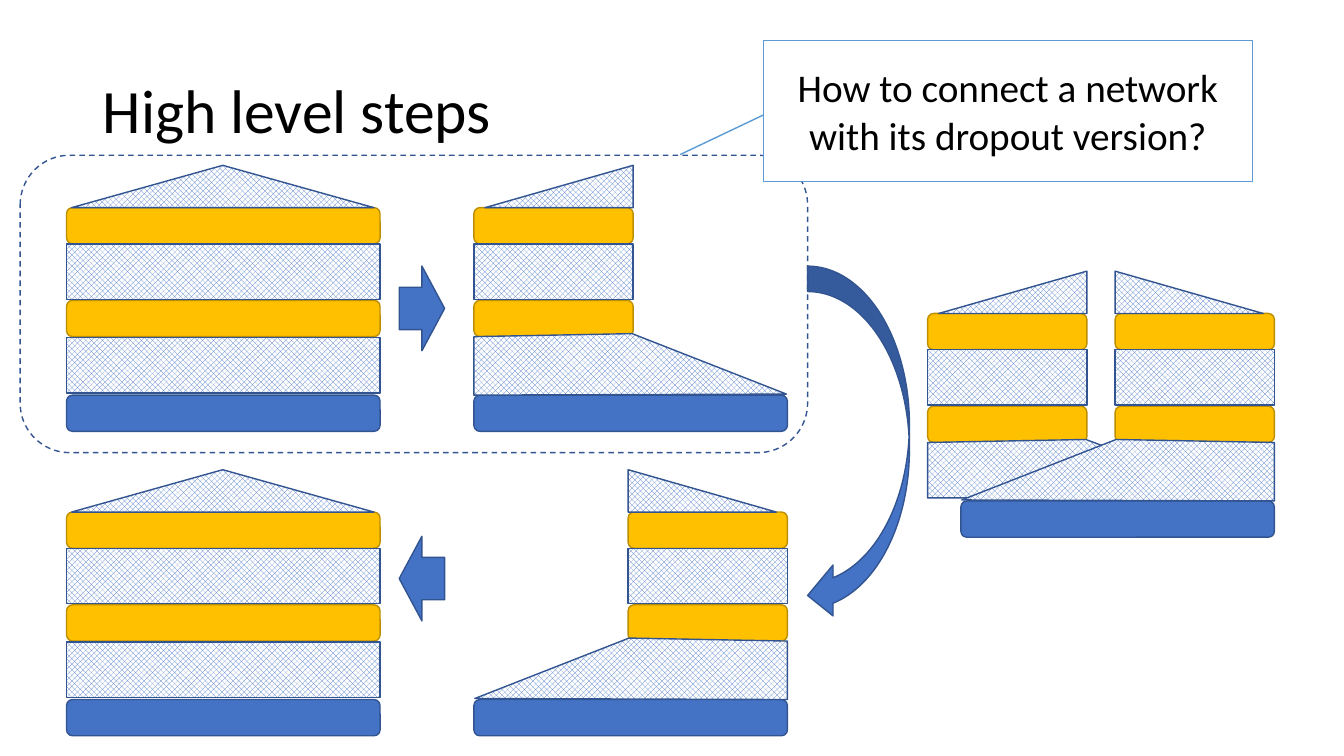
from pptx import Presentation
from pptx.dml.color import RGBColor
from pptx.enum.dml import MSO_LINE, MSO_PATTERN
from pptx.enum.shapes import MSO_SHAPE
from pptx.enum.text import MSO_ANCHOR, PP_ALIGN
from pptx.oxml.ns import qn
from pptx.util import Inches, Pt

TITLE = "High level steps"
QUESTION = "How to connect a network with its dropout version?"
COLORS = {"blue": "4472C4", "navy": "325491", "gold": "FFC000", "brown": "BD8E00",
          "sky": "5B9BD5", "white": "FFFFFF", "black": "000000"}
OPEN, SOLID = MSO_PATTERN.OUTLINED_DIAMOND, MSO_PATTERN.SOLID_DIAMOND

FULL_NETWORKS = [(0.66, 1.64, OPEN), (0.66, 4.66, SOLID)]
HALF_NETWORKS = [
    {"left": 4.7, "top": 4.66, "pattern": SOLID, "mirrored": True},
    {"left": 9.2, "top": 2.69, "pattern": OPEN, "base": False},
    {"left": 9.53, "top": 2.69, "pattern": SOLID, "mirrored": True},
    {"left": 4.7, "top": 1.64, "pattern": OPEN},
]
ARROWS = [
    (MSO_SHAPE.RIGHT_ARROW, (3.96, 2.64, 0.45, 0.84), False),
    (MSO_SHAPE.RIGHT_ARROW, (3.96, 5.32, 0.45, 0.84), True),
    (MSO_SHAPE.CURVED_LEFT_ARROW, (8.01, 2.64, 1.01, 3.52), False),
]

WIDTH, HALF_WIDTH = 3.11, 1.58
ROOF_HEIGHT, BAR_HEIGHT, WEIGHTS_HEIGHT = 0.42, 0.36, 0.55
GOLD_TOPS = (0.42, 1.34)
WEIGHTS_TOPS = (0.78, 1.71)
BASE_TOP = 2.28

presentation = Presentation()
presentation.slide_width, presentation.slide_height = Inches(13.33), Inches(7.5)
slide = presentation.slides.add_slide(presentation.slide_layouts[6])


def color(name):
    return RGBColor.from_string(COLORS[name])


def paint(shape, fill=None, line="navy", pattern=None):
    shape.shadow.inherit = False
    if pattern:
        shape.fill.patterned()
        shape.fill.pattern = pattern
        shape.fill.fore_color.rgb = color("blue")
        shape.fill.back_color.rgb = color("white")
    elif fill:
        shape.fill.solid()
        shape.fill.fore_color.rgb = color(fill)
    else:
        shape.fill.background()
    shape.line.color.rgb = color(line)
    shape.line.width = Pt(1)


def add(kind, box, flipped=False, **style):
    shape = slide.shapes.add_shape(kind, *map(Inches, box))
    if flipped:
        shape.element.spPr.find(qn("a:xfrm")).set("flipH", "1")
    paint(shape, **style)
    return shape


def add_bar(left, top, width, fill, line):
    add(MSO_SHAPE.ROUNDED_RECTANGLE, (left, top, width, BAR_HEIGHT), fill=fill, line=line)


def add_weights(left, top, width, pattern):
    add(MSO_SHAPE.RECTANGLE, (left, top, width, WEIGHTS_HEIGHT), pattern=pattern)


def add_full_network(left, top, pattern):
    for offset in GOLD_TOPS:
        add_bar(left, top + offset, WIDTH, "gold", "brown")
    add_bar(left, top + BASE_TOP, WIDTH, "blue", "navy")
    add(MSO_SHAPE.ISOSCELES_TRIANGLE, (left + 0.05, top, 3, ROOF_HEIGHT), pattern=pattern)
    for offset in WEIGHTS_TOPS:
        add_weights(left, top + offset, WIDTH, pattern)


def add_half_network(left, top, pattern, mirrored=False, base=True):
    column = left + WIDTH - HALF_WIDTH if mirrored else left
    for offset in GOLD_TOPS:
        add_bar(column, top + offset, HALF_WIDTH, "gold", "brown")
    if base:
        add_bar(left, top + BASE_TOP, WIDTH, "blue", "navy")
    add_weights(column, top + WEIGHTS_TOPS[0], HALF_WIDTH, pattern)
    roof_left = column if mirrored else column + 0.11
    add(MSO_SHAPE.RIGHT_TRIANGLE, (roof_left, top, 1.47, ROOF_HEIGHT),
        flipped=not mirrored, pattern=pattern)
    bottom = BASE_TOP if base else 2.25
    outline = [(0, 1.7), (0, bottom), (3.1, bottom - 0.01), (1.57, 1.67)]
    points = [(Inches(left + (WIDTH - x if mirrored else x)), Inches(top + y))
              for x, y in outline]
    builder = slide.shapes.build_freeform(*points[0])
    builder.add_line_segments(points[1:], close=True)
    paint(builder.convert_to_shape(), pattern=pattern)


def write(shape, text, size, alignment):
    frame = shape.text_frame
    frame.word_wrap = True
    frame.vertical_anchor = MSO_ANCHOR.MIDDLE
    paragraph = frame.paragraphs[0]
    paragraph.text = text
    paragraph.alignment = alignment
    paragraph.font.name = "Calibri"
    paragraph.font.size = Pt(size)
    paragraph.font.color.rgb = color("black")
    return paragraph


title = slide.shapes.add_textbox(*map(Inches, (0.92, 0.4, 11.5, 1.45)))
write(title, TITLE, 44, PP_ALIGN.LEFT).line_spacing = 0.9

for network in FULL_NETWORKS:
    add_full_network(*network)
for network in HALF_NETWORKS:
    add_half_network(**network)
for kind, box, flipped in ARROWS:
    add(kind, box, flipped, fill="blue")

frame_outline = add(MSO_SHAPE.ROUNDED_RECTANGLE, (0.2, 1.54, 7.81, 2.95))
frame_outline.line.dash_style = MSO_LINE.DASH

callout = add(MSO_SHAPE.LINE_CALLOUT_1, (7.57, 0.4, 4.85, 1.4), fill="white", line="sky")
for index, value in enumerate((0.53, 0, 0.81, -0.17)):
    callout.adjustments[index] = value
write(callout, QUESTION, 28, PP_ALIGN.CENTER)

presentation.save("out.pptx")
